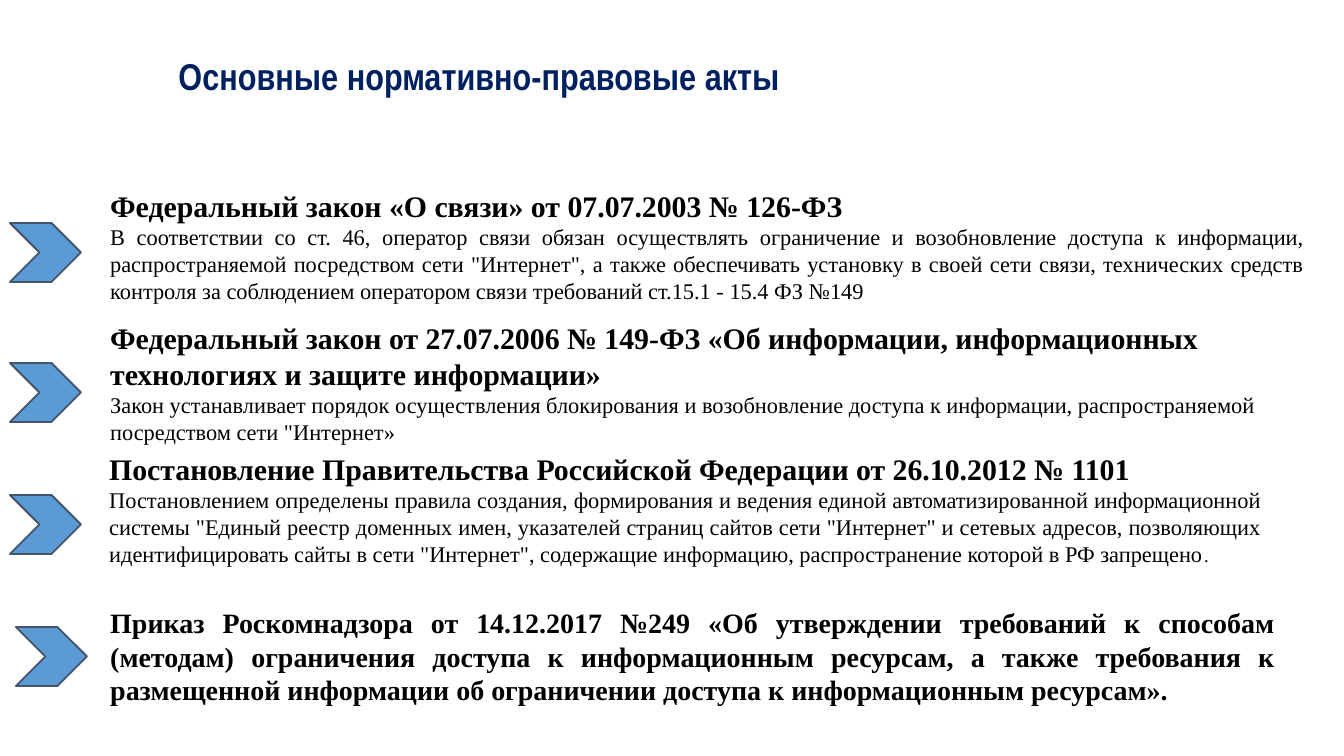
import pptx
import pptx.util
import pptx.dml.color
import pptx.enum.shapes
import pptx.enum.text

THEME = {
    "navy": "002060", "black": "000000", "blue": "5B9BD5", "slate": "44546A",
    "sans": "Arial Narrow", "serif": "Times New Roman",
    "title": 20, "head": 16, "order": 15, "body": 12, "dot": 10,
}
SIZE = (1344, 756)
TITLE = ("Основные нормативно-правовые акты", (165, 46, 891, 59))
ARROW = (71, 59)

ACTS = [
    {
        "box": (97, 181, 1222, 132), "arrow": (10, 223),
        "paras": [
            ("left", [("Федеральный закон «О связи» от 07.07.2003 № 126-ФЗ", "head")]),
            ("just", [("В соответствии со ст. 46, оператор связи обязан осуществлять ограничение "
                       "и возобновление доступа к информации, распространяемой посредством сети "
                       "\"Интернет\", а также обеспечивать установку в своей сети связи, технических "
                       "средств контроля за соблюдением оператором связи требований "
                       "ст.15.1 - 15.4 ФЗ №149", "body")]),
        ],
    },
    {
        "box": (97, 313, 1206, 140), "arrow": (10, 363),
        "paras": [
            ("left", [("Федеральный закон от 27.07.2006 № 149-ФЗ «Об информации, "
                       "информационных технологиях и защите информации»", "head")]),
            ("left", [("Закон устанавливает порядок осуществления блокирования и возобновление "
                       "доступа к информации, распространяемой посредством сети \"Интернет»", "body")]),
        ],
    },
    {
        "box": (96, 444, 1180, 132), "arrow": (10, 495),
        "paras": [
            ("left", [("Постановление Правительства Российской Федерации "
                       "от 26.10.2012 № 1101", "head")]),
            ("just", [("Постановлением определены правила создания, формирования и ведения единой "
                       "автоматизированной информационной системы \"Единый реестр доменных имен, "
                       "указателей страниц сайтов сети \"Интернет\" и сетевых адресов, позволяющих "
                       "идентифицировать сайты в сети \"Интернет\", содержащие информацию, "
                       "распространение которой в РФ запрещено", "body"), (".", "dot")]),
        ],
    },
    {
        "box": (97, 599, 1192, 116), "arrow": (16, 627),
        "paras": [
            ("just", [("Приказ Роскомнадзора от 14.12.2017 №249 «Об утверждении требований к "
                       "способам (методам) ограничения доступа к информационным ресурсам, а также "
                       "требования к размещенной информации об ограничении доступа к "
                       "информационным ресурсам».", "order")]),
        ],
    },
]

ALIGN = {
    "left": pptx.enum.text.PP_ALIGN.LEFT,
    "just": pptx.enum.text.PP_ALIGN.JUSTIFY,
}
BOLD = ("title", "head", "order")


def px(n):
    return round(n * 914400 / 134.4)


def color(name):
    return pptx.dml.color.RGBColor.from_string(THEME[name])


def write(para, text, *, size, face="serif", ink="black"):
    run = para.add_run()
    run.text = text
    font = run.font
    font.name = THEME[face]
    font.size = pptx.util.Pt(THEME[size])
    font.bold = size in BOLD
    font.color.rgb = color(ink)


def setup(frame):
    frame.word_wrap = True
    frame.auto_size = pptx.enum.text.MSO_AUTO_SIZE.NONE
    frame.vertical_anchor = pptx.enum.text.MSO_ANCHOR.TOP


def main():
    deck = pptx.Presentation()
    deck.slide_width, deck.slide_height = map(px, SIZE)
    slide = deck.slides.add_slide(deck.slide_layouts[5])

    text, box = TITLE
    title = slide.shapes.title
    title.left, title.top, title.width, title.height = map(px, box)
    setup(title.text_frame)
    para = title.text_frame.paragraphs[0]
    para.alignment = ALIGN["left"]
    write(para, text, size="title", face="sans", ink="navy")

    for act in ACTS:
        frame = slide.shapes.add_textbox(*map(px, act["box"])).text_frame
        setup(frame)
        for i, (align, runs) in enumerate(act["paras"]):
            para = frame.add_paragraph() if i else frame.paragraphs[0]
            para.alignment = ALIGN[align]
            for text, size in runs:
                write(para, text, size=size)

        arrow = slide.shapes.add_shape(
            pptx.enum.shapes.MSO_SHAPE.CHEVRON, *map(px, act["arrow"] + ARROW))
        arrow.shadow.inherit = False
        arrow.fill.solid()
        arrow.fill.fore_color.rgb = color("blue")
        arrow.line.color.rgb = color("slate")
        arrow.line.width = pptx.util.Pt(1)

    deck.save("out.pptx")


if __name__ == "__main__":
    main()
